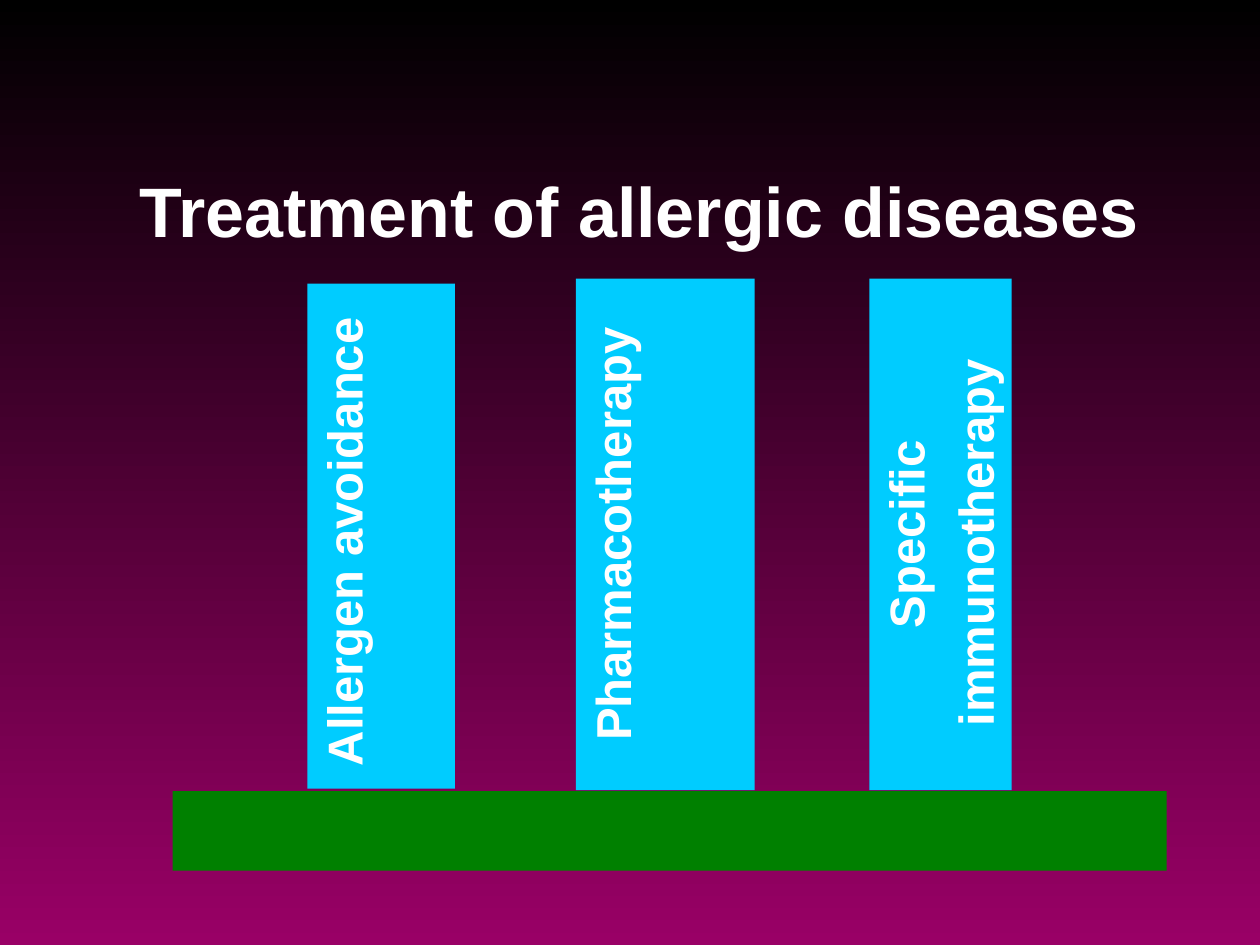
from pptx import Presentation
from pptx.dml.color import RGBColor
from pptx.enum.shapes import MSO_SHAPE as Shape
from pptx.enum.text import MSO_ANCHOR as Anchor, PP_ALIGN as Align
from pptx.util import Inches, Pt

WHITE = "FFFFFF"
PILLARS = [
    ((2.44, 2.25, 1.17, 4.01), [("Allergen avoidance", 28, WHITE, True), (" ", 24, WHITE, True)]),
    ((4.57, 2.21, 1.42, 4.06), [("Pharmacotherapy", 28, WHITE, True)]),
    ((6.9, 2.21, 1.13, 4.06), [("Specific immunotherapy", 28, WHITE, True), (" ", 34, "FF0000", False)]),
]


def color(code):
    return RGBColor.from_string(code)


def add_span(para, text, size, code, bold, font="Arial"):
    span = para.add_run()
    span.text = text
    span.font.name = font
    span.font.size = Pt(size)
    span.font.bold = bold
    span.font.color.rgb = color(code)


def paint_background(page):
    fill = page.background.fill
    fill.gradient()
    fill.gradient_angle = 270
    for stop, code in zip(fill.gradient_stops, ("000000", "990066")):
        stop.color.rgb = color(code)


def place_title(page, box):
    title = page.shapes.title
    title.left, title.top, title.width, title.height = map(Inches, box)
    frame = title.text_frame
    frame.word_wrap = True
    frame.vertical_anchor = Anchor.BOTTOM
    para = frame.paragraphs[0]
    para.alignment = Align.CENTER
    add_span(para, " ", 40, "00CCCC", False, "Times New Roman")
    add_span(para, "Treatment of allergic diseases", 40, WHITE, True)


def add_block(page, box, code):
    block = page.shapes.add_shape(Shape.RECTANGLE, *map(Inches, box))
    block.shadow.inherit = False
    block.fill.solid()
    block.fill.fore_color.rgb = color(code)
    block.line.fill.background()
    return block


def add_pillar(page, box, spans):
    left, top, width, height = box
    shift = (height - width) / 2
    pillar = add_block(page, (left - shift, top + shift, height, width), "00CCFF")
    pillar.rotation = 270
    frame = pillar.text_frame
    frame.word_wrap = True
    frame.vertical_anchor = Anchor.TOP
    para = frame.paragraphs[0]
    para.alignment = Align.CENTER
    for span in spans:
        add_span(para, *span)


def main():
    deck = Presentation()
    deck.slide_width, deck.slide_height = Inches(10), Inches(7.5)
    page = deck.slides.add_slide(deck.slide_layouts[5])
    paint_background(page)
    place_title(page, (0, 0.8, 10, 1.25))
    add_block(page, (1.37, 6.28, 7.89, 0.63), "008000")
    for box, spans in PILLARS:
        add_pillar(page, box, spans)
    deck.save("out.pptx")


if __name__ == "__main__":
    main()
